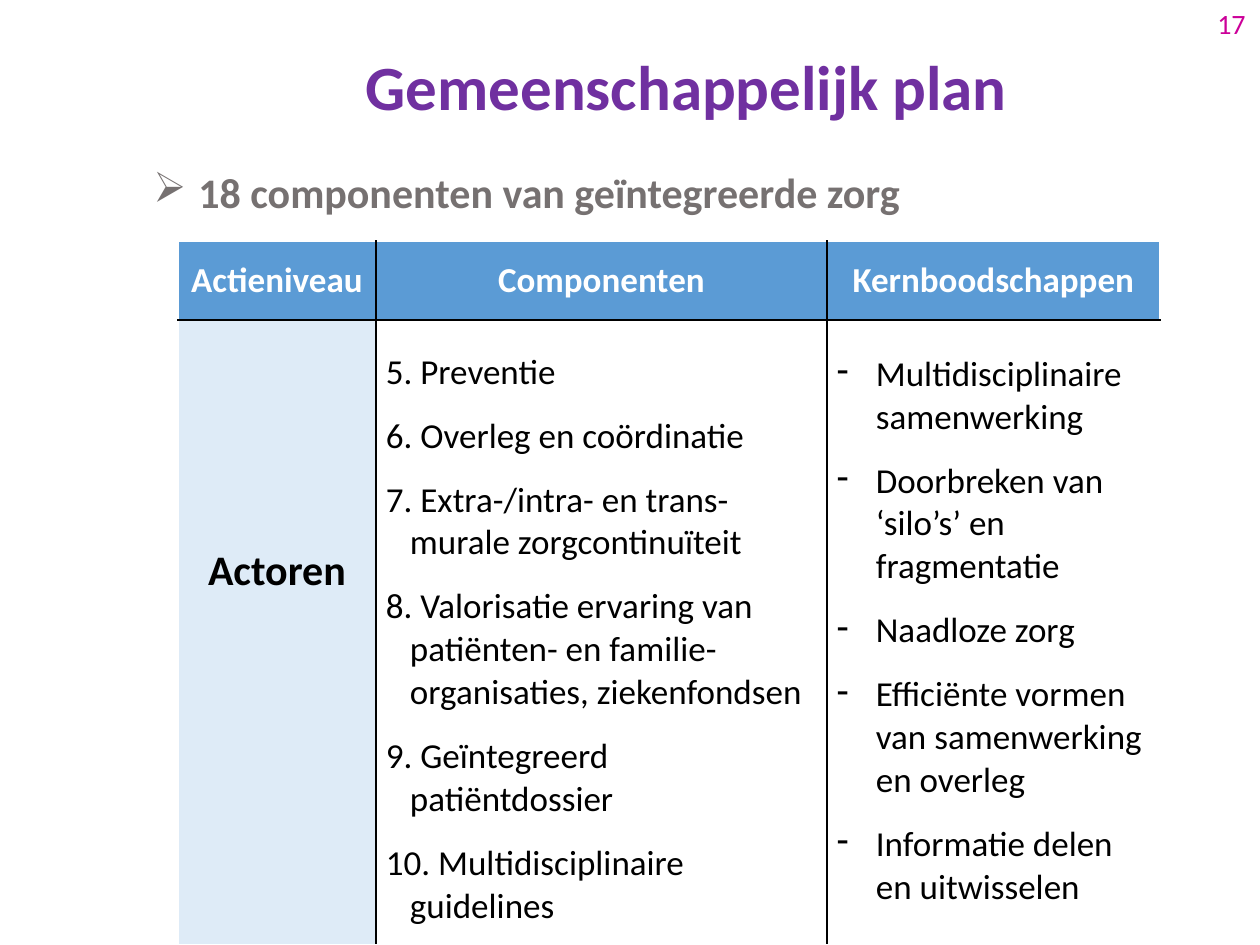
from lxml import etree
from pptx import Presentation, util as u
from pptx.dml.color import RGBColor
from pptx.enum import text
from pptx.oxml.ns import qn

PX = 914400 / 126
THEME = dict(
    font="Calibri", purple="7030A0", gray="767171", pink="CC0099", white="FFFFFF",
    black="000000", header="5B9BD5", level="DEEBF7",
    title=36, lead=24, cell=20, number=16,
)

TITLE = "Gemeenschappelijk plan"
LEAD = "18 componenten van geïntegreerde zorg"
NUMBER = "17"
HEADERS = ["Actieniveau", "Componenten", "Kernboodschappen"]
LEVEL = "Actoren"
COMPONENTS = [
    "5. Preventie",
    "6. Overleg en coördinatie",
    "7. Extra-/intra- en trans-murale zorgcontinuïteit",
    "8. Valorisatie ervaring van patiënten- en familie-organisaties, ziekenfondsen",
    "9. Geïntegreerd patiëntdossier",
    "10. Multidisciplinaire guidelines",
]
MESSAGES = [
    "Multidisciplinaire samenwerking",
    "Doorbreken van ‘silo’s’ en fragmentatie",
    "Naadloze zorg",
    "Efficiënte vormen van samenwerking en overleg",
    "Informatie delen en uitwisselen",
]
COLUMNS = [198, 451, 333]
ROWS = [79, 625]


def px(value):
    return u.Emu(round(value * PX))


def write(frame, lines, size, color, bold=False, align="LEFT", anchor="TOP",
          hang=0, bullet=None, gap=0, spacing=None):
    frame.word_wrap = True
    frame.vertical_anchor = text.MSO_ANCHOR[anchor]
    for i, line in enumerate(lines):
        p = frame.paragraphs[0] if i == 0 else frame.add_paragraph()
        p.alignment = text.PP_ALIGN[align]
        p.space_before = u.Pt(gap if i else 0)
        p.space_after = u.Pt(gap)
        if spacing:
            p.line_spacing = spacing
        props = p._p.get_or_add_pPr()
        props.set("marL", str(px(hang)))
        props.set("indent", str(px(-hang)))
        if bullet:
            etree.SubElement(props, qn("a:buChar")).set("char", bullet)
        run = p.add_run()
        run.text = line
        run.font.name = THEME["font"]
        run.font.size = u.Pt(THEME[size])
        run.font.bold = bold
        run.font.color.rgb = RGBColor.from_string(THEME[color])


def add_text(slide, box, lines, **style):
    write(slide.shapes.add_textbox(*map(px, box)).text_frame, lines, **style)


def draw_borders(cell, sides):
    props = cell._tc.get_or_add_tcPr()
    for i, side in enumerate(sides):
        line = etree.Element(qn(f"a:ln{side}"), w=str(u.Pt(1)))
        fill = etree.SubElement(line, qn("a:solidFill"))
        etree.SubElement(fill, qn("a:srgbClr"), val=THEME["black"])
        props.insert(i, line)


def add_plan(slide):
    table = slide.shapes.add_table(
        2, 3, px(178), px(241), px(sum(COLUMNS)), px(sum(ROWS))).table
    table.first_row = table.horz_banding = False
    for column, width in zip(table.columns, COLUMNS):
        column.width = px(width)
    for row, height in zip(table.rows, ROWS):
        row.height = px(height)

    heading = dict(size="cell", color="white", bold=True, align="CENTER", anchor="MIDDLE")
    listing = dict(size="cell", color="black", gap=6)
    body = [
        ([LEVEL], "level", 226, dict(size="lead", color="black", bold=True, align="CENTER")),
        (COMPONENTS, "white", 31, dict(listing, hang=24)),
        (MESSAGES, "white", 33, dict(listing, hang=39, bullet="-")),
    ]
    header = [([name], "header", 6, heading) for name in HEADERS]
    for r, parts in enumerate([header, body]):
        for c, (lines, fill, top, style) in enumerate(parts):
            cell = table.cell(r, c)
            cell.margin_left = cell.margin_right = px(10)
            cell.margin_top, cell.margin_bottom = px(top), px(6)
            cell.fill.solid()
            cell.fill.fore_color.rgb = RGBColor.from_string(THEME[fill])
            write(cell.text_frame, lines, **style)
            cell.vertical_anchor = text.MSO_ANCHOR[style.get("anchor", "TOP")]
            inner = [("L", c > 0), ("R", c < 2), ("T", r > 0), ("B", r < 1)]
            draw_borders(cell, [side for side, shown in inner if shown])


def main():
    deck = Presentation()
    deck.slide_width, deck.slide_height = px(1260), px(945)
    slide = deck.slides.add_slide(deck.slide_layouts[6])
    add_text(slide, (319, 0, 735, 181), [TITLE], size="title", color="purple",
             bold=True, align="CENTER", anchor="MIDDLE", spacing=0.9)
    add_text(slide, (141, 166, 1061, 481), [LEAD], size="lead", color="gray",
             bold=True, hang=45, bullet="➢", spacing=0.9)
    add_plan(slide)
    add_text(slide, (1203, 0, 57, 50), [NUMBER], size="number", color="pink", align="CENTER")
    deck.save("out.pptx")


if __name__ == "__main__":
    main()
